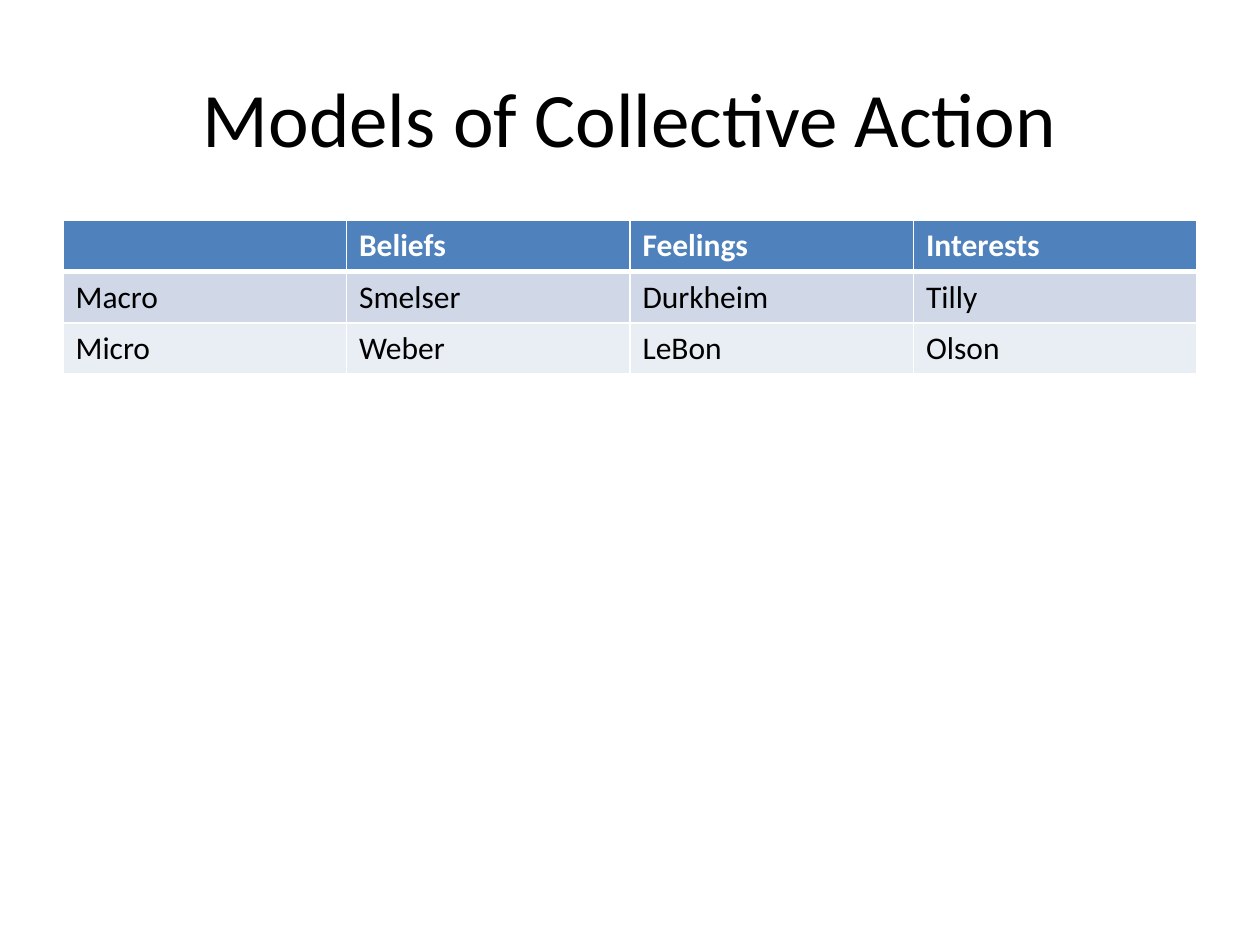
from lxml.etree import SubElement
from pptx import Presentation
from pptx.dml.color import RGBColor
from pptx.enum.text import MSO_ANCHOR, PP_ALIGN
from pptx.oxml.ns import qn
from pptx.util import Inches, Pt

HEADER_FILL = "4F81BD"
BODY_FILLS = ["D0D8E8", "E9EDF4"]
ROWS = [
    ["", "Beliefs", "Feelings", "Interests"],
    ["Macro", "Smelser", "Durkheim", "Tilly"],
    ["Micro", "Weber", "LeBon", "Olson"],
]


def set_font(p, color, **formats):
    p.font.color.rgb = RGBColor.from_string(color)
    for name, value in {"name": "Calibri", **formats}.items():
        setattr(p.font, name, value)


def add_border(cell, side, width, color="FFFFFF"):
    """Draw one cell edge; side is L, R, T or B, given in that order."""
    ln = SubElement(cell._tc.get_or_add_tcPr(), qn(f"a:ln{side}"), w=str(Pt(width)))
    fill = SubElement(ln, qn("a:solidFill"))
    SubElement(fill, qn("a:srgbClr"), val=color)


prs = Presentation()
prs.slide_width, prs.slide_height = Inches(10), Inches(7.5)
s = prs.slides.add_slide(prs.slide_layouts[6])

# Title
tf = s.shapes.add_textbox(Inches(0.5), Inches(0.3), Inches(9), Inches(1.25)).text_frame
tf.word_wrap = True
tf.vertical_anchor = MSO_ANCHOR.MIDDLE
p = tf.paragraphs[0]
p.text = "Models of Collective Action"
p.alignment = PP_ALIGN.CENTER
set_font(p, "000000", size=Pt(44))

# Table of models
table = s.shapes.add_table(
    len(ROWS), len(ROWS[0]), Inches(0.5), Inches(1.75), Inches(9), Inches(1.22)
).table
for i, row in enumerate(ROWS):
    is_header = i == 0
    fill = HEADER_FILL if is_header else BODY_FILLS[(i - 1) % 2]
    widths = {"L": 1, "R": 1, "T": 3 if i == 1 else 1, "B": 3 if is_header else 1}
    for j, text in enumerate(row):
        cell = table.cell(i, j)
        for side, width in widths.items():
            add_border(cell, side, width)
        cell.fill.solid()
        cell.fill.fore_color.rgb = RGBColor.from_string(fill)
        p = cell.text_frame.paragraphs[0]
        p.text = text
        set_font(p, "FFFFFF" if is_header else "000000", size=Pt(18), bold=is_header)

prs.save("out.pptx")
